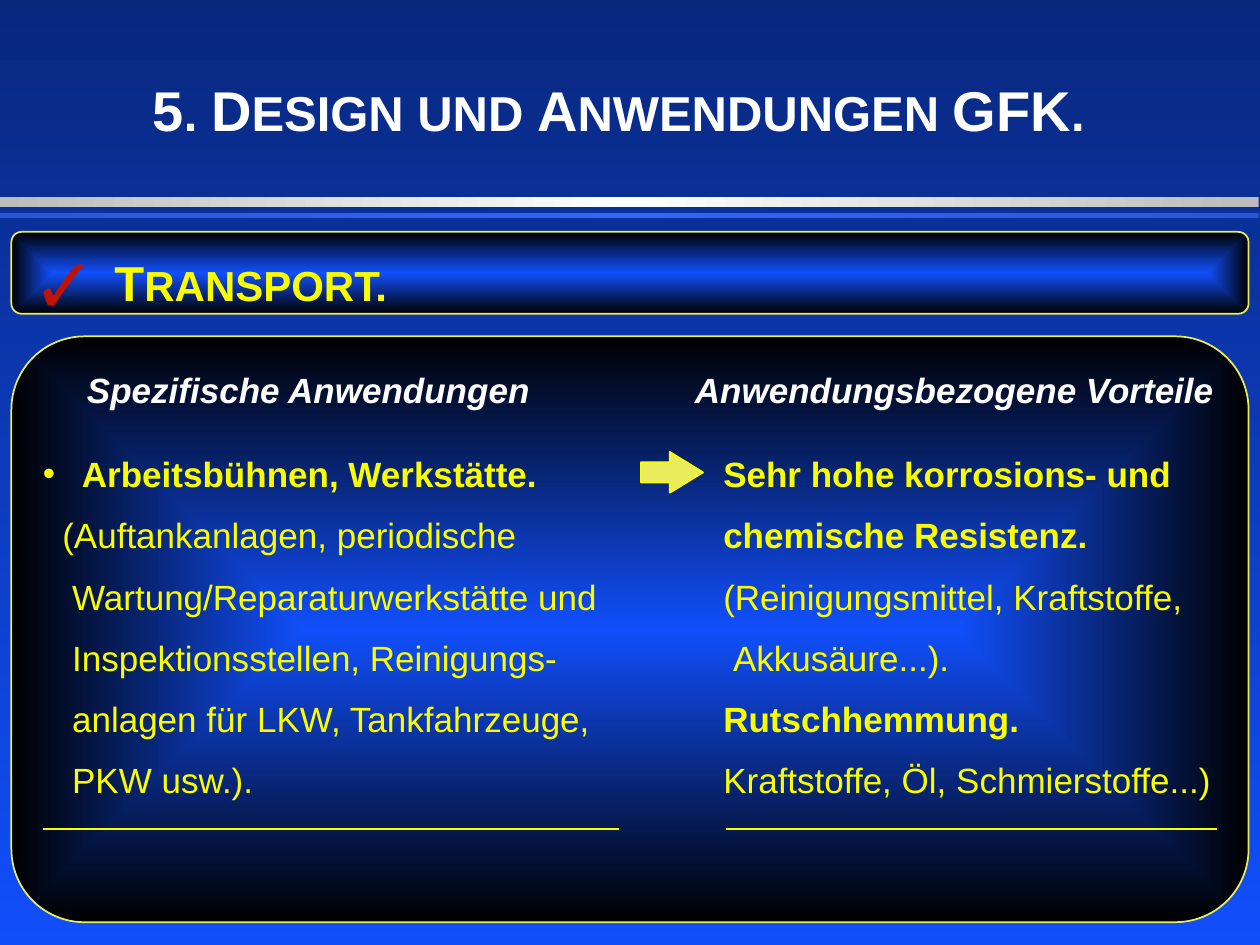
"""Builds the slide on GRP design and applications in transport."""
from lxml import etree
from pptx import Presentation
from pptx.dml.color import RGBColor
from pptx.enum import shapes, text
from pptx.oxml.ns import qn
from pptx.util import Pt

YELLOW, WHITE, RED, PALE = "FAFD00", "FFFFFF", "C11208", "EAEC5E"
BLUE, BLACK = "114FFB", "000000"

TITLE = [("5", 32), (". ", 28), ("D", 32), ("ESIGN UND ", 28),
         ("A", 32), ("NWENDUNGEN ", 28), ("GFK", 32), (".", 28)]
TOPIC = [("T", 28), ("RANSPORT.", 24)]
HEADINGS = [("Spezifische Anwendungen", 2, 348.5),
            ("Anwendungsbezogene Vorteile", 376.5, 337.7)]
APPLICATIONS = [("Arbeitsbühnen, Werkstätte.", True, 22.3),
                ("(Auftankanlagen, periodische", False, 11.1),
                ("Wartung/Reparaturwerkstätte und", False, 16.7),
                ("Inspektionsstellen, Reinigungs-", False, 16.7),
                ("anlagen für LKW, Tankfahrzeuge,", False, 16.7),
                ("PKW usw.).", False, 16.7)]
BENEFITS = [("Sehr hohe korrosions- und", True, 0),
            ("chemische Resistenz.", True, 0),
            ("(Reinigungsmittel, Kraftstoffe,", False, 0),
            ("Akkusäure...).", False, 5.6),
            ("Rutschhemmung.", True, 0),
            ("Kraftstoffe, Öl, Schmierstoffe...)", False, 0)]
COLUMNS = [(APPLICATIONS, 17.3, 366.5), (BENEFITS, 406.1, 308.2)]
BARS = [(112.3, 5.8, "BCBCBC", "FFFFFF"), (121.7, 2.9, "2C56D7", "3365FB")]
PANELS = [(192.2, 334.8), (132.5, 46.8)]
RULES = [(24.5, 353.5), (414.7, 695.5)]


def rgb(value):
    return RGBColor.from_string(value)


def paint_gradient(fill, owner, colours, angle=None):
    fill.gradient()
    gradient = next(owner.iter(qn("a:gradFill")))
    for child in list(gradient):
        gradient.remove(child)
    stops = etree.SubElement(gradient, qn("a:gsLst"))
    for i, colour in enumerate(colours):
        stop = etree.SubElement(stops, qn("a:gs"), pos=str(100000 * i // (len(colours) - 1)))
        etree.SubElement(stop, qn("a:srgbClr"), val=colour)
    if angle is None:
        route = etree.SubElement(gradient, qn("a:path"), {"path": "shape"})
        etree.SubElement(route, qn("a:fillToRect"), dict.fromkeys("ltrb", "50000"))
    else:
        etree.SubElement(gradient, qn("a:lin"), ang=str(angle * 60000), scaled="0")


def add_shape(slide, kind, *box):
    shape = slide.shapes.add_shape(kind, *map(Pt, box))
    shape.shadow.inherit = False
    return shape


def place(holder, left, top, width, height, wrap=True):
    holder.left, holder.top, holder.width, holder.height = map(Pt, (left, top, width, height))
    frame = holder.text_frame
    frame.auto_size = text.MSO_AUTO_SIZE.NONE
    frame.vertical_anchor = text.MSO_ANCHOR.TOP
    frame.word_wrap = wrap
    return frame


def add_run(paragraph, words, size, colour, bold=True, italic=False):
    run = paragraph.add_run()
    run.text = words
    font = run.font
    font.name, font.size, font.bold, font.italic = "Arial", Pt(size), bold, italic
    font.color.rgb = rgb(colour)


def indent(paragraph, margin, bullet=None):
    properties = paragraph._p.get_or_add_pPr()
    properties.set("marL", str(Pt(margin)))
    properties.set("indent", str(Pt(-margin if bullet else 0)))
    if bullet:
        etree.SubElement(properties, qn("a:buChar"), char=bullet)
    else:
        etree.SubElement(properties, qn("a:buNone"))


def fill_list(frame, items):
    for i, (words, bold, margin) in enumerate(items):
        paragraph = frame.add_paragraph() if i else frame.paragraphs[0]
        paragraph.space_before = Pt(11 if i else 0)
        indent(paragraph, margin, "•" if margin > 20 else None)
        add_run(paragraph, words, 20, YELLOW, bold)


def main():
    deck = Presentation()
    deck.slide_width, deck.slide_height = Pt(720), Pt(540)
    slide = deck.slides.add_slide(deck.slide_layouts[4])
    paint_gradient(slide.background.fill, slide.element, ["08277D", BLUE], 90)
    title, left_head, left_list, right_head, right_list = slide.placeholders

    backdrop = []
    for top, height, edge, middle in BARS:
        bar = add_shape(slide, shapes.MSO_SHAPE.RECTANGLE, 0, top, 719.3, height)
        paint_gradient(bar.fill, bar.element, [edge, middle, edge], 0)
        bar.line.fill.background()
        backdrop.append(bar)
    for top, height in PANELS:
        panel = add_shape(slide, shapes.MSO_SHAPE.ROUNDED_RECTANGLE, 6.5, top, 707, height)
        panel.adjustments[0] = 0.125
        paint_gradient(panel.fill, panel.element, [BLUE, BLACK])
        panel.line.color.rgb, panel.line.width = rgb(PALE), Pt(1)
        backdrop.append(panel)
    for shape in reversed(backdrop):
        slide.shapes._spTree.insert(2, shape.element)

    heading = place(title, -0.7, 31.7, 708.5, 54).paragraphs[0]
    heading.alignment, heading.line_spacing = text.PP_ALIGN.CENTER, 1.2
    for words, size in TITLE:
        add_run(heading, words, size, WHITE)

    check = place(slide.shapes.add_textbox(0, 0, 0, 0), 11.5, 131.8, 42.5, 60.5)
    add_run(check.paragraphs[0], "✓", 44, RED, False)
    topic = place(slide.shapes.add_textbox(0, 0, 0, 0), 58.3, 140.5, 173.5, 41.8, False)
    for words, size in TOPIC:
        add_run(topic.paragraphs[0], words, size, YELLOW)

    for holder, (words, left, width) in zip((left_head, right_head), HEADINGS):
        paragraph = place(holder, left, 207, width, 31.7).paragraphs[0]
        paragraph.alignment, paragraph.space_before = text.PP_ALIGN.CENTER, Pt(0)
        indent(paragraph, 0)
        add_run(paragraph, words, 20, WHITE, italic=True)
    for holder, (items, left, width) in zip((left_list, right_list), COLUMNS):
        fill_list(place(holder, left, 255, width, 211.7), items)

    arrow = add_shape(slide, shapes.MSO_SHAPE.RIGHT_ARROW, 366.3, 258.3, 35.5, 23.3)
    arrow.adjustments[1] = 0.814
    arrow.fill.solid()
    arrow.fill.fore_color.rgb = rgb(PALE)
    arrow.line.color.rgb, arrow.line.width = rgb(YELLOW), Pt(1)

    for start, end in RULES:
        rule = slide.shapes.add_connector(
            shapes.MSO_CONNECTOR.STRAIGHT, Pt(start), Pt(473.8), Pt(end), Pt(473.8))
        rule.line.color.rgb, rule.line.width = rgb(YELLOW), Pt(1)
        etree.SubElement(rule.element.spPr, qn("a:effectLst"))

    deck.save("out.pptx")


if __name__ == "__main__":
    main()
